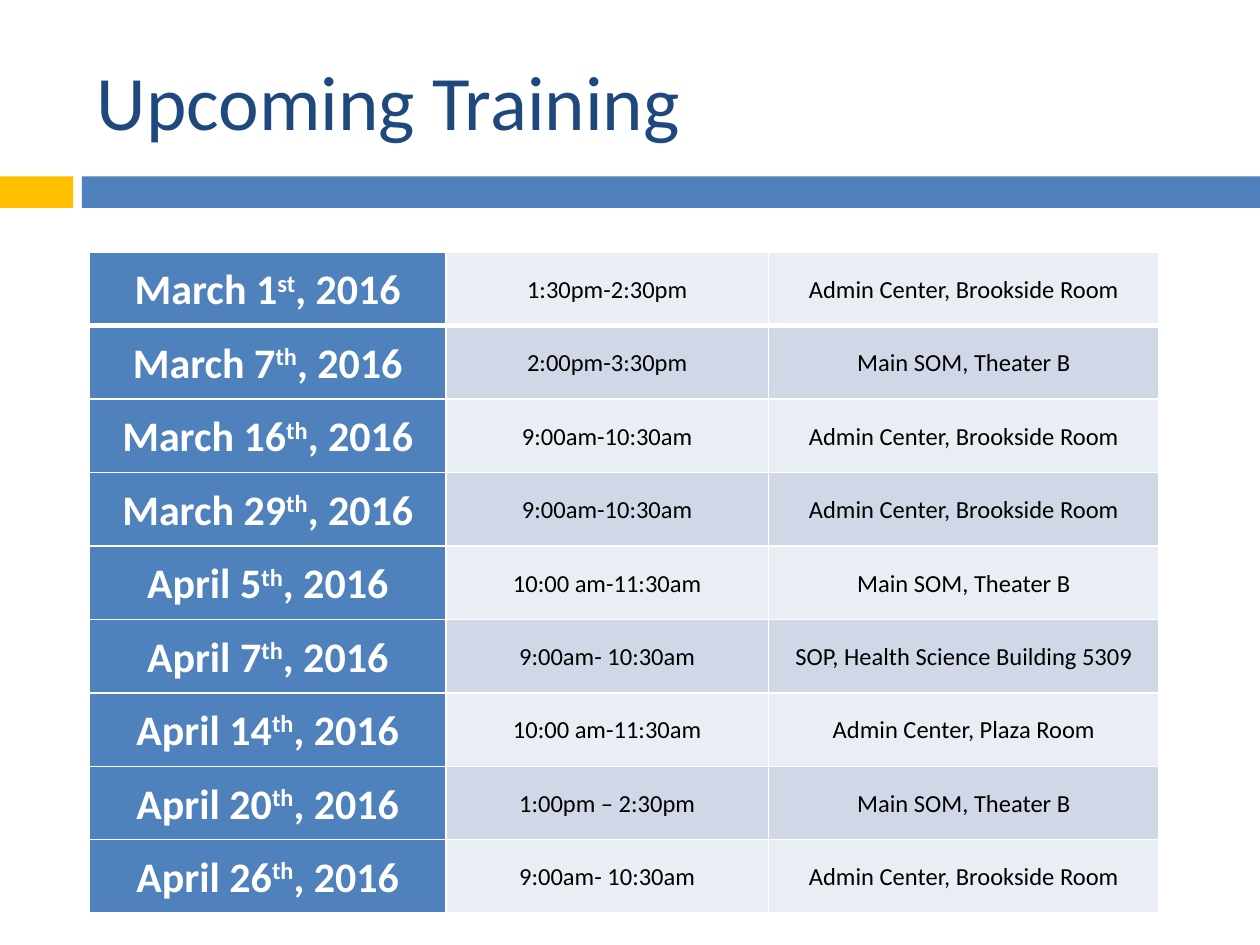
from dataclasses import dataclass

from lxml.etree import SubElement
from pptx import Presentation
from pptx.dml.color import RGBColor
from pptx.enum.shapes import MSO_SHAPE as Shape
from pptx.enum.text import MSO_ANCHOR as Anchor, PP_ALIGN as Align
from pptx.oxml.ns import qn
from pptx.util import Inches, Pt


@dataclass(frozen=True)
class Theme:
    font: str = "Calibri"
    title_size: int = 44
    date_size: int = 24
    detail_size: int = 14
    title: str = "1F497D"
    accent: str = "FFC000"
    blue: str = "4F81BD"
    bands: tuple[str, str] = ("E9EDF4", "D0D8E8")
    white: str = "FFFFFF"
    black: str = "000000"


@dataclass(frozen=True)
class Bar:
    left: float
    width: float
    color: str


@dataclass(frozen=True)
class Session:
    day: str
    suffix: str
    time: str
    place: str


THEME = Theme()
BARS = [Bar(0, 0.58, THEME.accent), Bar(0.65, 9.35, THEME.blue)]
YEAR = ", 2016"
BROOKSIDE = "Admin Center, Brookside Room"
THEATER = "Main SOM, Theater B"
SESSIONS = [
    Session("March 1", "st", "1:30pm-2:30pm", BROOKSIDE),
    Session("March 7", "th", "2:00pm-3:30pm", THEATER),
    Session("March 16", "th", "9:00am-10:30am", BROOKSIDE),
    Session("March 29", "th", "9:00am-10:30am", BROOKSIDE),
    Session("April 5", "th", "10:00 am-11:30am", THEATER),
    Session("April 7", "th", "9:00am- 10:30am", "SOP, Health Science Building 5309"),
    Session("April 14", "th", "10:00 am-11:30am", "Admin Center, Plaza Room"),
    Session("April 20", "th", "1:00pm – 2:30pm", THEATER),
    Session("April 26", "th", "9:00am- 10:30am", BROOKSIDE),
]
COLUMN_WIDTHS = (2.83, 2.56, 3.1)
TABLE_HEIGHT = 5.25


def style_font(font, size: int, color: str, bold: bool = False) -> None:
    font.name = THEME.font
    font.size = Pt(size)
    font.bold = bold
    font.color.rgb = RGBColor.from_string(color)


def draw_bar(page, bar: Bar) -> None:
    box = page.shapes.add_shape(
        Shape.RECTANGLE, Inches(bar.left), Inches(1.4), Inches(bar.width), Inches(0.25))
    box.shadow.inherit = False
    box.fill.solid()
    box.fill.fore_color.rgb = RGBColor.from_string(bar.color)
    box.line.fill.background()


def draw_title(page, text: str) -> None:
    box = page.shapes.add_textbox(Inches(0.67), Inches(0.25), Inches(8.92), Inches(1.08))
    frame = box.text_frame
    frame.word_wrap = True
    frame.vertical_anchor = Anchor.MIDDLE
    para = frame.paragraphs[0]
    para.text = text
    style_font(para.font, THEME.title_size, THEME.title)


def set_borders(cell, top: float, bottom: float) -> None:
    properties = cell._tc.get_or_add_tcPr()
    widths = {"a:lnL": 1, "a:lnR": 1, "a:lnT": top, "a:lnB": bottom}
    for position, (tag, width) in enumerate(widths.items()):
        line = SubElement(properties, qn(tag), w=str(Pt(width)))
        fill = SubElement(line, qn("a:solidFill"))
        SubElement(fill, qn("a:srgbClr"), val=THEME.white)
        properties.insert(position, line)  # borders come before the cell fill


def prepare_cell(cell, fill: str, row: int):
    """Format a cell and return its centred paragraph."""
    cell.fill.solid()
    cell.fill.fore_color.rgb = RGBColor.from_string(fill)
    # A heavier rule separates the first row from the rest
    set_borders(cell, top=3 if row == 1 else 1, bottom=3 if row == 0 else 1)
    cell.vertical_anchor = Anchor.MIDDLE
    cell.margin_left = cell.margin_right = Inches(0.07)
    cell.margin_top = cell.margin_bottom = 0
    para = cell.text_frame.paragraphs[0]
    para.alignment = Align.CENTER
    para.line_spacing = 1.07
    return para


def write_date(para, session: Session) -> None:
    style_font(para.font, THEME.date_size, THEME.white, bold=True)
    for text in (session.day, session.suffix, YEAR):
        span = para.add_run()
        span.text = text
        if text == session.suffix:
            span.font._element.set("baseline", "30000")


def draw_schedule(page, sessions: list[Session]) -> None:
    table = page.shapes.add_table(
        len(sessions), len(COLUMN_WIDTHS), Inches(0.71), Inches(2),
        Inches(sum(COLUMN_WIDTHS)), Inches(TABLE_HEIGHT)).table
    table.first_row = table.horz_banding = False
    for column, width in zip(table.columns, COLUMN_WIDTHS):
        column.width = Inches(width)
    for row, session in enumerate(sessions):
        write_date(prepare_cell(table.cell(row, 0), THEME.blue, row), session)
        for column, text in enumerate((session.time, session.place), start=1):
            para = prepare_cell(table.cell(row, column), THEME.bands[row % 2], row)
            para.text = text
            style_font(para.font, THEME.detail_size, THEME.black)


def main() -> None:
    deck = Presentation()
    deck.slide_width, deck.slide_height = Inches(10), Inches(7.5)
    page = deck.slides.add_slide(deck.slide_layouts[6])

    # Header
    for bar in BARS:
        draw_bar(page, bar)
    draw_title(page, "Upcoming Training")

    # Training dates
    draw_schedule(page, SESSIONS)

    deck.save("out.pptx")


if __name__ == "__main__":
    main()
